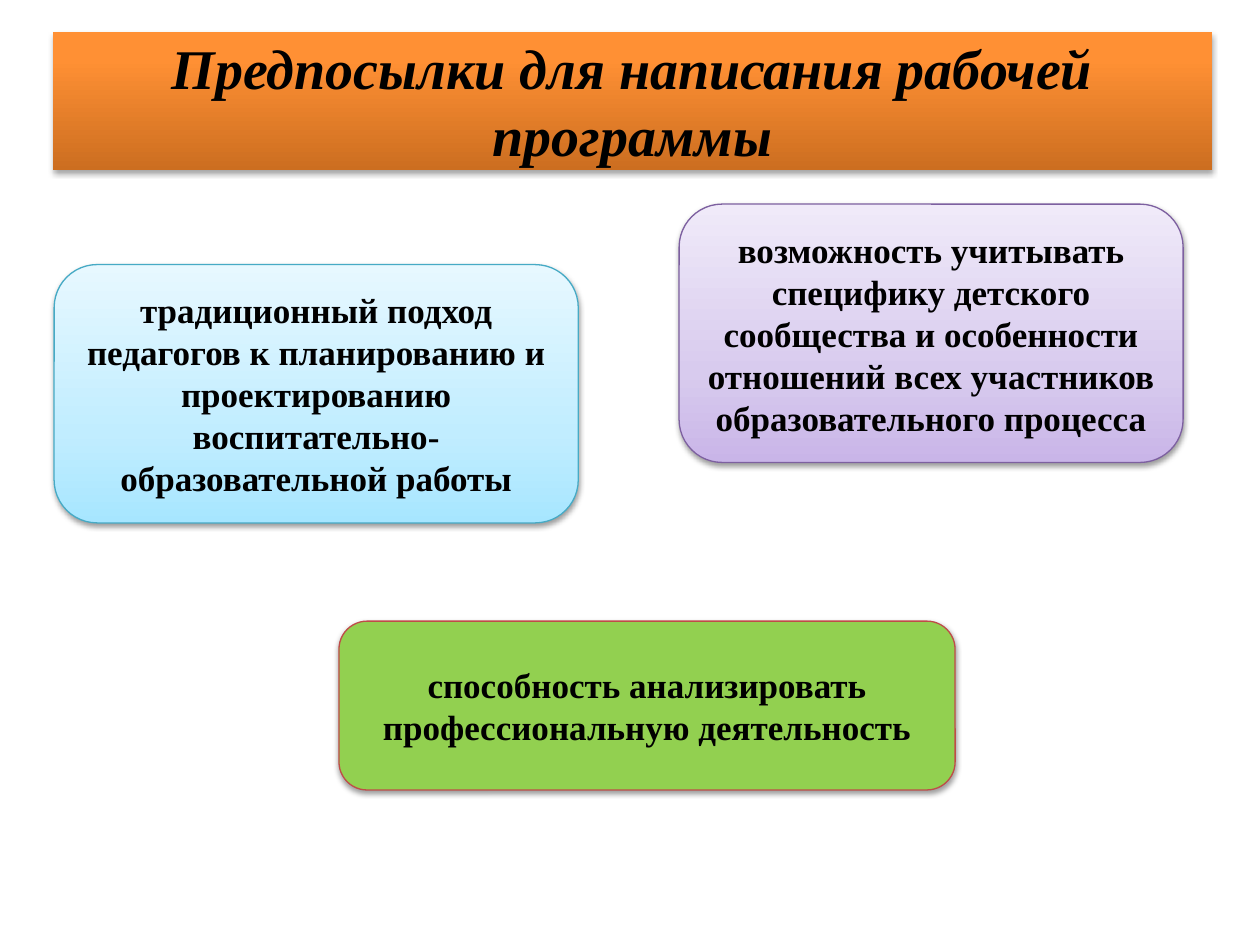
from dataclasses import dataclass

from lxml.etree import SubElement
from pptx import Presentation
from pptx.dml.color import RGBColor
from pptx.enum.shapes import MSO_SHAPE as Preset
from pptx.enum.text import MSO_ANCHOR as Anchor, MSO_AUTO_SIZE as AutoSize, PP_ALIGN as Align
from pptx.oxml.ns import qn
from pptx.util import Inches, Pt

WIDTH, HEIGHT = Inches(10), Inches(7.5)
COLUMNS, ROWS = 100, 75


@dataclass(frozen=True)
class Theme:
    font: str = "Times New Roman"
    ink: str = "000000"
    title_size: int = 32
    body_size: int = 20
    outline: float = 0.75
    # Gradients run from the bottom edge up: (position in percent, colour)
    orange: tuple = ((0, "CC6E20"), (80, "FF9034"), (100, "FF9136"))
    violet: tuple = ((0, "C9B5E8"), (35, "D8CBEE"), (100, "F0EAF9"))
    blue: tuple = ((0, "A7E6FF"), (35, "C1EDFF"), (100, "E7F8FF"))
    green: str = "92D050"
    violet_line: str = "7D60A0"
    blue_line: str = "46AAC5"
    green_line: str = "BF4C48"


THEME = Theme()


def grid_box(column, row, columns, rows):
    """Turn grid cells into left, top, width and height."""
    cell_w, cell_h = WIDTH / COLUMNS, HEIGHT / ROWS
    return (int(column * cell_w), int(row * cell_h),
            int(columns * cell_w), int(rows * cell_h))


def add_colour(parent, colour):
    return SubElement(parent, qn("a:srgbClr"), val=colour)


def paint(shape, fill):
    """Fill with one colour, or with a gradient given as stops."""
    if isinstance(fill, str):
        shape.fill.solid()
        shape.fill.fore_color.rgb = RGBColor.from_string(fill)
        return
    shape.fill.gradient()
    shape.fill.gradient_angle = 90
    stops = next(shape.element.iter(qn("a:gsLst")))
    for stop in list(stops):
        stops.remove(stop)
    for position, colour in fill:
        add_colour(SubElement(stops, qn("a:gs"), pos=str(position * 1000)), colour)


def cast_shadow(shape, opacity, distance):
    shape.shadow.inherit = False
    effects = next(shape.element.iter(qn("a:effectLst")))
    shadow = SubElement(effects, qn("a:outerShdw"), blurRad=str(Pt(3.1)),
                        dist=str(Pt(distance)), dir="5400000", rotWithShape="0")
    SubElement(add_colour(shadow, THEME.ink), qn("a:alpha"), val=str(opacity * 1000))


def write(shape, wording, size, italic=False, side_inset=0.1):
    frame = shape.text_frame
    frame.text = wording
    frame.word_wrap = True
    frame.auto_size = AutoSize.NONE
    frame.vertical_anchor = Anchor.MIDDLE
    frame.margin_left = frame.margin_right = Inches(side_inset)
    frame.margin_top = frame.margin_bottom = Inches(0.05)
    paragraph = frame.paragraphs[0]
    paragraph.alignment = Align.CENTER
    font = paragraph.font
    font.name, font.size = THEME.font, Pt(size)
    font.bold, font.italic = True, italic
    font.color.rgb = RGBColor.from_string(THEME.ink)


def style_title(title, wording, box):
    """Make the title placeholder a rounded banner."""
    title.left, title.top, title.width, title.height = box
    outline = SubElement(title.element.spPr, qn("a:prstGeom"), prst="roundRect")
    SubElement(outline, qn("a:avLst"))
    paint(title, THEME.orange)
    title.line.fill.background()
    cast_shadow(title, 35, 1.8)
    write(title, wording, THEME.title_size, italic=True)


def add_card(slide, wording, box, fill, line, side_inset=0.08):
    card = slide.shapes.add_shape(Preset.ROUNDED_RECTANGLE, *box)
    paint(card, fill)
    card.line.color.rgb = RGBColor.from_string(line)
    card.line.width = Pt(THEME.outline)
    cast_shadow(card, 38, 1.6)
    write(card, wording, THEME.body_size, side_inset=side_inset)


def main():
    deck = Presentation()
    deck.slide_width, deck.slide_height = WIDTH, HEIGHT
    slide = deck.slides.add_slide(deck.slide_layouts[5])

    # Banner
    style_title(slide.shapes.title, "Предпосылки для написания рабочей программы",
                grid_box(4.2, 2.5, 92, 11))

    # Prerequisites
    add_card(slide, "возможность учитывать специфику детского сообщества и особенности "
             "отношений всех участников образовательного процесса",
             grid_box(53.9, 16.2, 40, 20.5), THEME.violet, THEME.violet_line)
    add_card(slide, "способность анализировать профессиональную деятельность",
             grid_box(26.9, 49.3, 48.9, 13.4), THEME.green, THEME.green_line, 0.04)
    add_card(slide, "традиционный подход педагогов к планированию и проектированию "
             "воспитательно-образовательной работы",
             grid_box(4.3, 21, 41.6, 20.5), THEME.blue, THEME.blue_line)

    deck.save("out.pptx")


if __name__ == "__main__":
    main()
